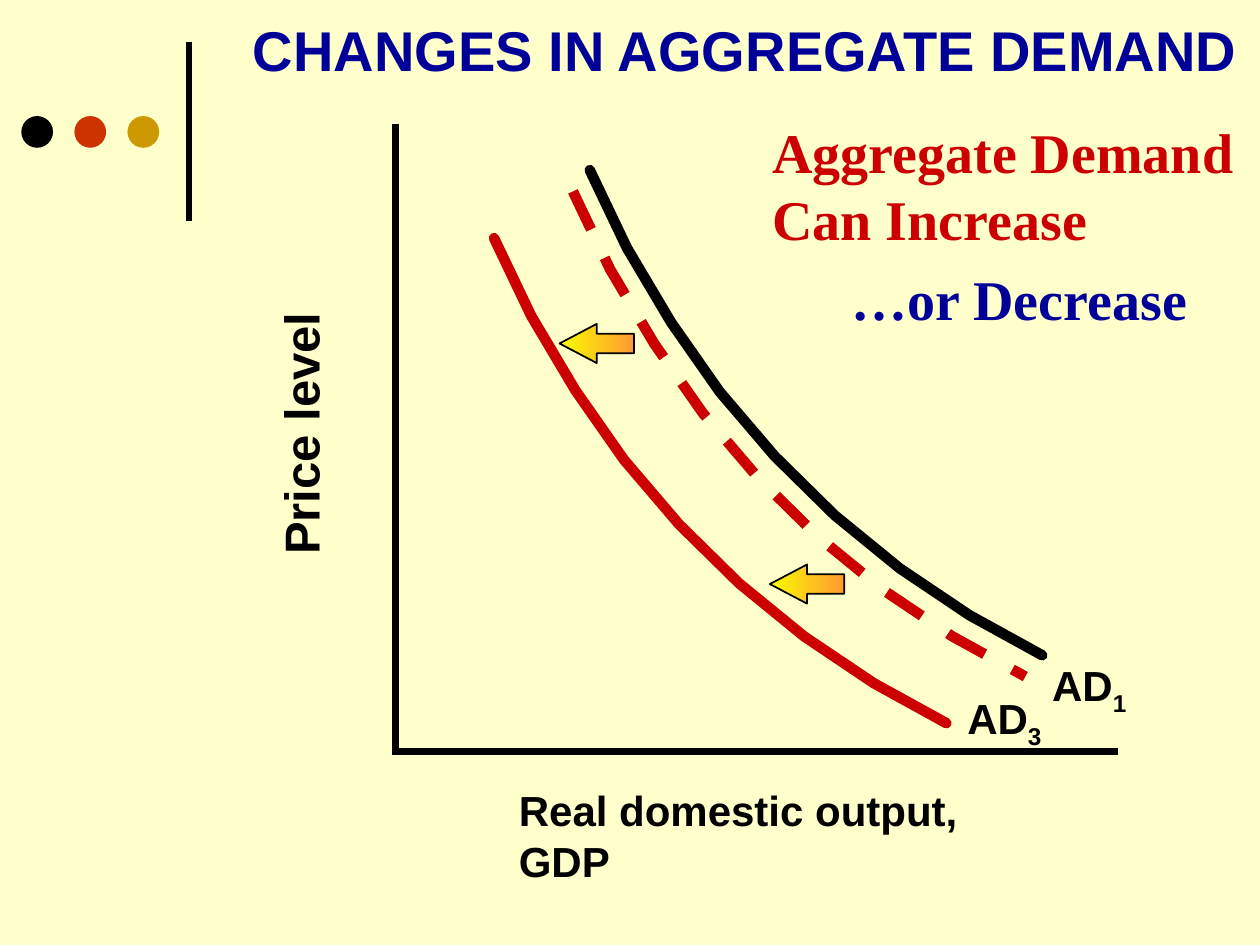
from pptx import Presentation
from pptx.dml.color import RGBColor
from pptx.enum.dml import MSO_LINE_DASH_STYLE as DASH
from pptx.enum.shapes import MSO_CONNECTOR as CONN, MSO_SHAPE as SHAPE
from pptx.oxml.ns import qn
from pptx.util import Cm, Pt
from lxml.etree import SubElement

COLORS = {
    "paper": "FFFFCC", "ink": "000000", "navy": "000099", "red": "CC0000",
    "rust": "CC3300", "gold": "CC9900", "yellow": "FAFD00", "orange": "FF9933",
}
# Demand curve, measured in cm from its upper left end
CURVE = [(0, 0), (0.75, 1.57), (1.64, 3.07), (2.62, 4.47), (3.73, 5.77),
         (4.94, 6.96), (6.25, 8.03), (7.65, 8.97), (9.12, 9.78)]


def rgb(name):
    return RGBColor.from_string(COLORS[name])


def add_text(slide, box, lines, size, color="ink", font="Arial", wrap=False):
    """Each line is a list of (text, is_subscript) runs."""
    sp = slide.shapes.add_textbox(*map(Cm, box))
    tf = sp.text_frame
    tf.word_wrap = wrap
    for i, runs in enumerate(lines):
        p = tf.paragraphs[0] if i == 0 else tf.add_paragraph()
        for text, is_sub in runs:
            r = p.add_run()
            r.text = text
            r.font.name, r.font.size, r.font.bold = font, Pt(size), True
            r.font.color.rgb = rgb(color)
            if is_sub:
                r.font._element.set("baseline", "-25000")
    return sp


def add_line(slide, x1, y1, x2, y2, width):
    line = slide.shapes.add_connector(CONN.STRAIGHT, *map(Cm, (x1, y1, x2, y2)))
    line.line.color.rgb = rgb("ink")
    line.line.width = Pt(width)
    SubElement(line._element.spPr, qn("a:effectLst"))


def add_curve(slide, x, y, color, dashed=False):
    points = [(Cm(x + dx), Cm(y + dy)) for dx, dy in CURVE]
    builder = slide.shapes.build_freeform(*points[0])
    builder.add_line_segments(points[1:], close=False)
    sp = builder.convert_to_shape()
    sp.shadow.inherit = False
    sp.fill.background()
    sp.line.color.rgb = rgb(color)
    sp.line.width = Pt(6)
    if dashed:
        sp.line.dash_style = DASH.DASH
    else:
        sp.line._get_or_add_ln().set("cap", "rnd")
    SubElement(sp.line._get_or_add_ln(), qn("a:round"))


def add_shift_arrow(slide, x, y):
    sp = slide.shapes.add_shape(SHAPE.LEFT_ARROW, Cm(x), Cm(y), Cm(1.5), Cm(0.79))
    sp.shadow.inherit = False
    sp.adjustments[1] = 0.95
    sp.fill.gradient()
    sp.fill.gradient_angle = 0
    for stop, color in zip(sp.fill.gradient_stops, ("yellow", "orange")):
        stop.color.rgb = rgb(color)
    sp.line.color.rgb = rgb("ink")
    sp.line.width = Pt(1)


def add_ornament(slide, x, y, w, h):
    # Three dots beside a vertical rule
    for i, color in enumerate(("ink", "rust", "gold")):
        dot = slide.shapes.add_shape(SHAPE.OVAL, Cm(x + i * 1.07), Cm(y + 1.5),
                                     Cm(0.64), Cm(0.64))
        dot.shadow.inherit = False
        dot.fill.solid()
        dot.fill.fore_color.rgb = rgb(color)
        dot.line.fill.background()
    add_line(slide, x + w, y, x + w, y + h, 3)


def add_demand_graph(slide, x, y, w, h):
    # Axes and their titles
    add_line(slide, x, y, x, y + h, 4)
    add_line(slide, x - 0.03, y + h - 0.05, x + w, y + h - 0.05, 4)
    label = add_text(slide, (x - 4.63, y + 5.52, 5.38, 1.42),
                     [[("Price level", False)]], 28)
    label.rotation = 270
    add_text(slide, (x + 2.23, y + h + 0.49, 11.4, 1.27),
             [[("Real domestic output, GDP", False)]], 24, wrap=True)
    # Curves
    add_curve(slide, x + 3.91, y + 0.92, "ink")
    add_curve(slide, x + 1.98, y + 2.29, "red")
    add_curve(slide, x + 3.57, y + 1.35, "red", dashed=True)
    # Curve labels
    for dx, dy, number in ((12.98, 10.67, "1"), (11.27, 11.33, "3")):
        add_text(slide, (x + dx, y + dy, 2.03, 1.27),
                 [[("AD", False), (number, True)]], 24)
    # Leftward shift
    for dx, dy in ((3.3, 4.02), (7.54, 8.87)):
        add_shift_arrow(slide, x + dx, y + dy)


def add_message(slide, x, y, w, h):
    add_text(slide, (x, y, w, h),
             [[("Aggregate Demand", False)], [("Can Increase", False)]],
             32, "red", "Times New Roman")
    add_text(slide, (x + 1.6, y + h, 7.32, 1.6), [[("…or Decrease", False)]],
             32, "navy", "Times New Roman")


def main():
    prs = Presentation()
    prs.slide_width, prs.slide_height = Cm(25.4), Cm(19.05)
    slide = prs.slides.add_slide(prs.slide_layouts[6])
    slide.background.fill.solid()
    slide.background.fill.fore_color.rgb = rgb("paper")

    add_ornament(slide, 0.43, 0.84, 3.38, 3.61)
    add_text(slide, (4.85, 0.18, 20.45, 1.6),
             [[("CHANGES IN AGGREGATE DEMAND", False)]], 32, "navy")
    add_demand_graph(slide, 7.98, 2.51, 14.55, 12.7)
    add_message(slide, 15.32, 2.24, 9.83, 2.97)
    prs.save("out.pptx")


if __name__ == "__main__":
    main()
